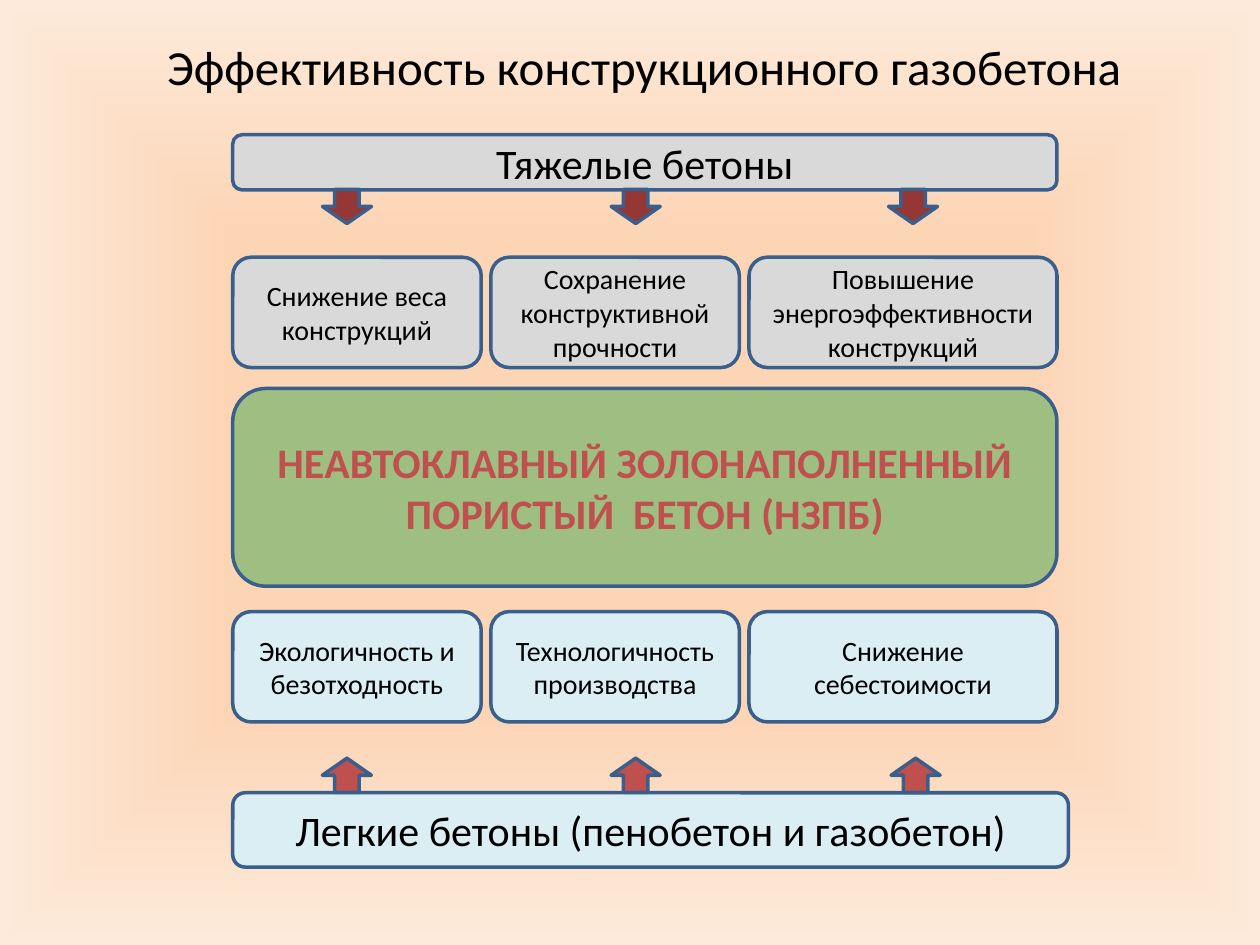
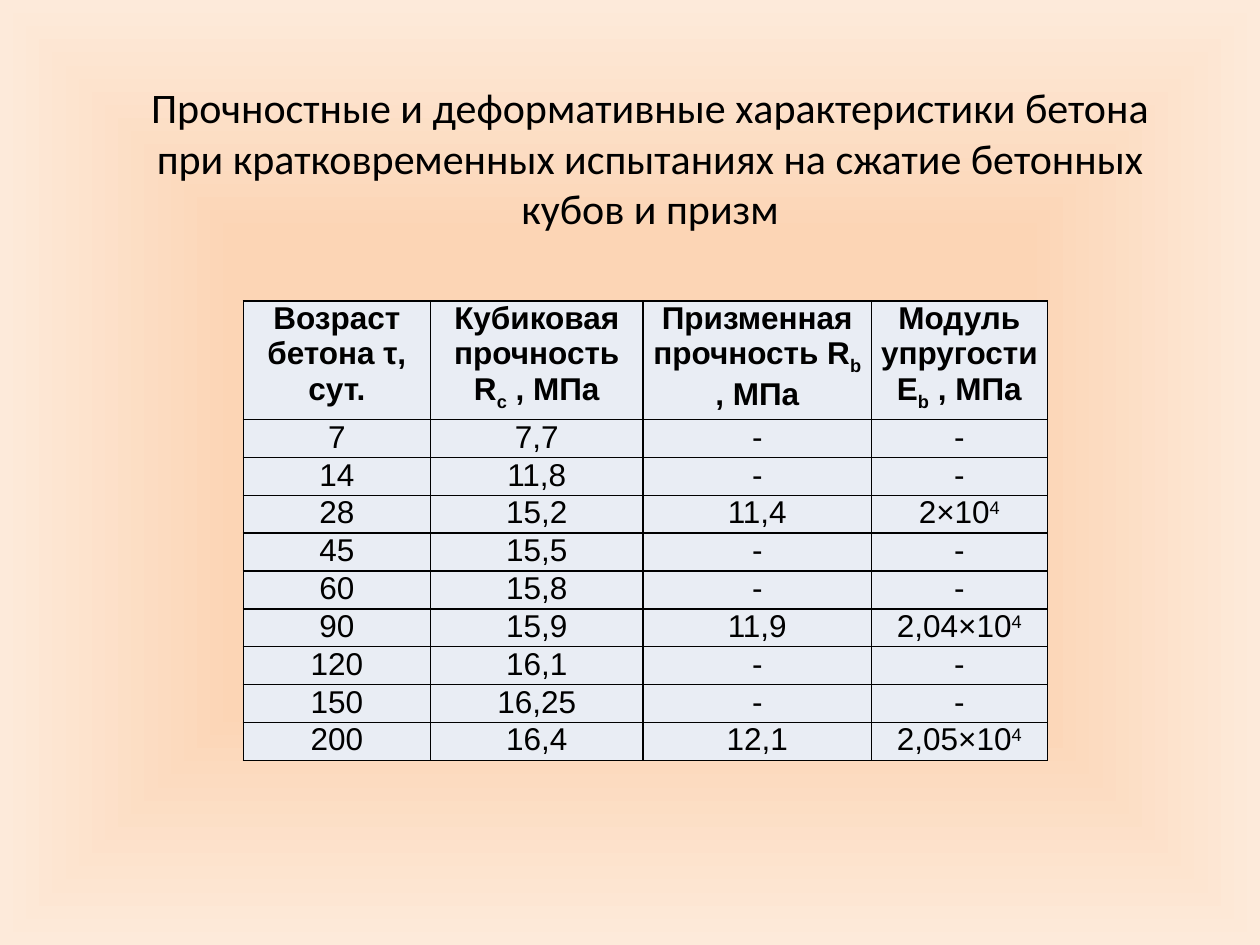
"""Two slides on the strength and merits of aerated concrete."""
from itertools import accumulate

from pptx import Presentation, oxml
from pptx import util as u
from pptx.dml import color
from pptx.enum import shapes, text
from pptx.oxml import ns

BLACK, EDGE, RED, MAROON = "000000", "3A5F8C", "C0504D", "953735"
GREY, BLUE, GREEN, PALE = "D9D9D9", "DBEEF4", "9FBE82", "E9EDF4"
GLOW = [(0, "FCD5B5"), (50, "FCD5B5"), (100, "FDEADA")]
LEFT, GAP, WIDTHS = 133, 5.5, [142, 142, 176]
FULL = sum(WIDTHS) + 2 * GAP
SHIFTS = {"_": -25000, "^": 30000}

HEADS = ["Возраст бетона τ, сут.", "Кубиковая прочность R|_с| , МПа",
         "Призменная прочность R|_b| , МПа", "Модуль упругости \nE|_b| , МПа"]
ROWS = [
    ["7", "7,7", "-", "-"],
    ["14", "11,8", "-", "-"],
    ["28", "15,2", "11,4", "2×10|^4"],
    ["45", "15,5", "-", "-"],
    ["60", "15,8", "-", "-"],
    ["90", "15,9", "11,9", "2,04×10|^4"],
    ["120", "16,1", "-", "-"],
    ["150", "16,25", "-", "-"],
    ["200", "16,4", "12,1", "2,05×10|^4"],
]


def paint(part, tint):
    """Give a fill or a line format a solid colour."""
    fill = getattr(part, "fill", part)
    fill.solid()
    fill.fore_color.rgb = color.RGBColor.from_string(tint)


def style(para, size, tint=BLACK, bold=False, face="Calibri"):
    """Centre a paragraph and set its font."""
    para.alignment = text.PP_ALIGN.CENTER
    font = para.font
    font.name, font.size, font.bold = face, u.Pt(size), bold
    font.color.rgb = color.RGBColor.from_string(tint)


def write(frame, words, size, tint=BLACK, bold=False):
    """Put one centred paragraph in the middle of a text frame."""
    frame.word_wrap = True
    frame.vertical_anchor = text.MSO_ANCHOR.MIDDLE
    para = frame.paragraphs[0]
    para.text = words
    style(para, size, tint, bold)


def start(deck):
    """Add a blank slide with the peach glow behind it."""
    slide = deck.slides.add_slide(deck.slide_layouts[6])
    stops = "".join(f'<a:gs pos="{pos * 1000}"><a:srgbClr val="{tint}"/></a:gs>'
                    for pos, tint in GLOW)
    back = oxml.parse_xml(
        f'<p:bg {ns.nsdecls("p", "a")}><p:bgPr><a:gradFill rotWithShape="1">'
        f'<a:gsLst>{stops}</a:gsLst><a:path path="shape">'
        '<a:fillToRect l="50000" t="50000" r="50000" b="50000"/></a:path>'
        '</a:gradFill><a:effectLst/></p:bgPr></p:bg>')
    slide.element.cSld.insert(0, back)
    return slide


def title(slide, words, box, size):
    """Add a centred slide title."""
    label = slide.shapes.add_textbox(*map(u.Pt, box))
    write(label.text_frame, words, size)


def shape(slide, kind, box, tint):
    """Add a filled shape with the shared outline."""
    item = slide.shapes.add_shape(kind, *map(u.Pt, box))
    item.shadow.inherit = False
    paint(item, tint)
    paint(item.line, EDGE)
    item.line.width = u.Pt(2)
    return item


def card(slide, words, box, tint, size=24, ink=BLACK, bold=False):
    """Add a rounded card with text."""
    item = shape(slide, shapes.MSO_SHAPE.ROUNDED_RECTANGLE, box, tint)
    write(item.text_frame, words, size, ink, bold)


def cards(slide, top, tint, labels):
    """Add a row of three cards."""
    lefts = accumulate(WIDTHS[:-1], lambda x, w: x + w + GAP, initial=LEFT)
    for left, width, words in zip(lefts, WIDTHS, labels):
        card(slide, words, (left, top, width, 63), tint, 16)


def arrows(slide, lefts, top, tint, turn):
    """Add a row of turned block arrows."""
    for left in lefts:
        item = shape(slide, shapes.MSO_SHAPE.RIGHT_ARROW,
                     (left, top, 19.5, 28), tint)
        item.rotation = turn


def border(cell):
    """Draw a thin black line on each side of a cell."""
    props = cell._tc.get_or_add_tcPr()
    for spot, side in enumerate(("lnL", "lnR", "lnT", "lnB")):
        props.insert(spot, oxml.parse_xml(
            f'<a:{side} {ns.nsdecls("a")} w="12700"><a:solidFill>'
            f'<a:srgbClr val="{BLACK}"/></a:solidFill></a:{side}>'))


def enter(cell, words, bold):
    """Fill a cell; | splits runs, _ lowers and ^ raises a run."""
    cell.margin_left = cell.margin_right = u.Pt(5)
    cell.margin_top = cell.margin_bottom = 0
    paint(cell, PALE)
    border(cell)
    frame = cell.text_frame
    for spot, line in enumerate(words.split("\n")):
        para = frame.add_paragraph() if spot else frame.paragraphs[0]
        style(para, 18, bold=bold, face="Arial")
        for part in line.split("|"):
            shift = SHIFTS.get(part[0])
            run = para.add_run()
            run.text = part[1:] if shift else part
            if shift:
                run.font._element.set("baseline", str(shift))


def grid(slide, left, top, widths, rows):
    """Add the bordered table with a bold head row."""
    highs = [64] + [20.5] * (len(rows) - 1)
    box = (left, top, sum(widths), sum(highs))
    table = slide.shapes.add_table(len(rows), len(widths),
                                   *map(u.Pt, box)).table
    table.first_row = table.horz_banding = False
    for col, width in zip(table.columns, widths):
        col.width = u.Pt(width)
    for i, (row, high, line) in enumerate(zip(table.rows, highs, rows)):
        row.height = u.Pt(high)
        for cell, words in zip(row.cells, line):
            enter(cell, words, i == 0)


def merits(deck):
    """Build the slide that compares the kinds of concrete."""
    slide = start(deck)
    card(slide, "НЕАВТОКЛАВНЫЙ ЗОЛОНАПОЛНЕННЫЙ ПОРИСТЫЙ  БЕТОН (НЗПБ)",
         (LEFT, 222, FULL, 113), GREEN, ink=RED, bold=True)
    card(slide, "Тяжелые бетоны", (LEFT, 77, FULL, 31.5), GREY)
    cards(slide, 147, GREY, ["Снижение веса конструкций",
                             "Сохранение конструктивной прочности",
                             "Повышение энергоэффективности конструкций"])
    cards(slide, 349.5, BLUE, ["Экологичность и безотходность",
                               "Технологичность производства",
                               "Снижение себестоимости"])
    card(slide, "Легкие бетоны (пенобетон и газобетон)",
         (LEFT, 453, 477.5, 42.5), BLUE)
    arrows(slide, (188.5, 353.5, 512), 104, MAROON, 90)
    arrows(slide, (188.5, 353.5, 513.5), 429, RED, 270)
    title(slide, "Эффективность конструкционного газобетона",
          (44.5, 6.5, 647, 62.5), 28)


def strength(deck):
    """Build the slide with the strength table."""
    slide = start(deck)
    title(slide, "Прочностные и деформативные характеристики бетона при "
          "кратковременных испытаниях на сжатие бетонных кубов и призм",
          (65.5, 32, 612, 116), 24)
    grid(slide, 139, 172, [107, 121.5, 130.5, 100.5], [HEADS] + ROWS)


def main():
    """Build and save the deck."""
    deck = Presentation()
    deck.slide_width, deck.slide_height = u.Pt(720), u.Pt(540)
    merits(deck)
    strength(deck)
    deck.save("out.pptx")


if __name__ == "__main__":
    main()
